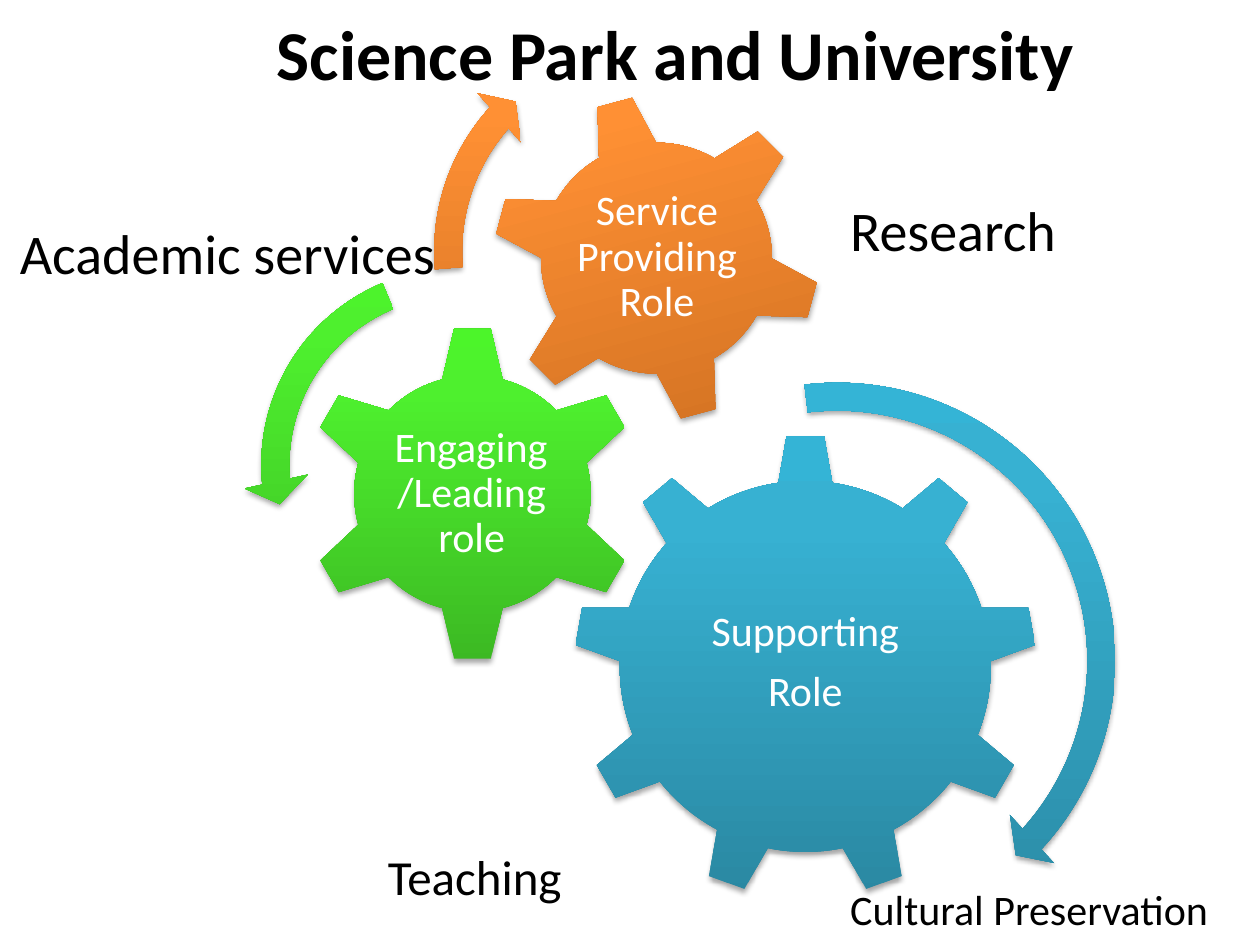
import dataclasses

import lxml.etree
import pptx
import pptx.dml.color
import pptx.enum.shapes
import pptx.enum.text
import pptx.oxml.ns
import pptx.util

Cm = pptx.util.Cm
Pt = pptx.util.Pt
SHAPE = pptx.enum.shapes.MSO_SHAPE
qn = pptx.oxml.ns.qn


@dataclasses.dataclass(frozen=True)
class Theme:
    font: str = "Calibri"
    text: str = "000000"
    gear_text: str = "FFFFFF"
    shadow: str = "000000"
    # Gradients run from the bottom up
    stops: tuple = (0, 80, 100)
    blue: tuple = ("2A88A2", "37B1D2", "34B4D6")
    green: tuple = ("3CB923", "4EF02E", "4CF52A")
    orange: tuple = ("CC6E20", "FF9034", "FF9136")
    title_size: int = 40
    large: int = 32
    medium: int = 28
    small: int = 24


def write_text(tf, text, *, font, size, color, bold=False, align=None,
               line_spacing=None, space_after=None):
    """Fill a text frame, one paragraph per line of text."""
    for i, line in enumerate(text.split("\n")):
        p = tf.paragraphs[0] if i == 0 else tf.add_paragraph()
        p.alignment = align
        p.line_spacing = line_spacing
        p.space_after = space_after
        r = p.add_run()
        r.text = line
        r.font.name = font
        r.font.size = Pt(size)
        r.font.bold = bold
        r.font.color.rgb = pptx.dml.color.RGBColor.from_string(color)


def add_color(parent, color):
    return lxml.etree.SubElement(parent, qn("a:srgbClr"), val=color)


class SlideBuilder:
    def __init__(self, slide, theme):
        self.slide = slide
        self.theme = theme

    def solid(self, kind, left, top, size, colors, rotation=0, adjust=()):
        """Add a square preset shape with gradient fill and soft shadow."""
        s = self.slide.shapes.add_shape(kind, Cm(left), Cm(top), Cm(size), Cm(size))
        s.rotation = rotation
        for i, value in enumerate(adjust):
            s.adjustments[i] = value
        s.line.fill.background()

        s.fill.gradient()
        s.fill.gradient_angle = 90
        stops = s.fill._fill._gradFill.find(qn("a:gsLst"))
        for gs in list(stops):
            stops.remove(gs)
        for position, color in zip(self.theme.stops, colors):
            gs = lxml.etree.SubElement(stops, qn("a:gs"), pos=str(position * 1000))
            add_color(gs, color)

        s.shadow.inherit = False
        effects = s._element.spPr.find(qn("a:effectLst"))
        shadow = lxml.etree.SubElement(
            effects, qn("a:outerShdw"), blurRad=str(Pt(3.1)), dist=str(Pt(1.8)),
            dir="5400000", rotWithShape="0")
        lxml.etree.SubElement(add_color(shadow, self.theme.shadow),
                              qn("a:alpha"), val="35000")

    def gear_text(self, text, left, top, width, height):
        s = self.slide.shapes.add_textbox(Cm(left), Cm(top), Cm(width), Cm(height))
        tf = s.text_frame
        tf.word_wrap = True
        tf.vertical_anchor = pptx.enum.text.MSO_ANCHOR.MIDDLE
        tf.margin_left = tf.margin_right = tf.margin_top = tf.margin_bottom = Cm(0.08)
        size = self.theme.small
        write_text(tf, text, font=self.theme.font, size=size,
                   color=self.theme.gear_text,
                   align=pptx.enum.text.PP_ALIGN.CENTER,
                   line_spacing=0.9, space_after=Pt(0.35 * size))

    def label(self, text, left, top, width, height, size, bold=False):
        s = self.slide.shapes.add_textbox(Cm(left), Cm(top), Cm(width), Cm(height))
        tf = s.text_frame
        tf.word_wrap = False
        tf.auto_size = pptx.enum.text.MSO_AUTO_SIZE.SHAPE_TO_FIT_TEXT
        write_text(tf, text, font=self.theme.font, size=size,
                   color=self.theme.text, bold=bold)


def main():
    prs = pptx.Presentation()
    prs.slide_width, prs.slide_height = Cm(25.4), Cm(19.05)
    theme = Theme()
    b = SlideBuilder(prs.slides.add_slide(prs.slide_layouts[6]), theme)

    # Gears with their roles
    b.solid(SHAPE.GEAR_9, 11.56, 8.76, 9.35, theme.blue)
    b.gear_text("Supporting\nRole", 13.44, 10.97, 5.59, 4.8)
    b.solid(SHAPE.GEAR_6, 6.12, 6.55, 6.81, theme.green)
    b.gear_text("Engaging/Leading role", 7.82, 8.28, 3.38, 3.35)
    b.solid(SHAPE.GEAR_6, 9.91, 1.88, 6.65, theme.orange, rotation=345)
    b.gear_text("Service Providing Role", 11.38, 3.33, 3.73, 3.73)

    # Arrows showing the turning direction
    b.solid(SHAPE.CIRCULAR_ARROW, 10.9, 7.34, 11.96, theme.blue,
            adjust=(0.047, 2.99, 25.49, 157.93, 0.055))
    b.solid(SHAPE.LEFT_CIRCULAR_ARROW, 4.9, 5.03, 8.69, theme.green,
            adjust=(0.065, 4.3, 104.89, 148.38, 0.075))
    b.solid(SHAPE.CIRCULAR_ARROW, 8.38, 0.38, 9.37, theme.orange,
            adjust=(0.06, 3.94, 133.14, 105.08, 0.07))

    # Title and surrounding labels
    b.label("Science Park and University", 5.33, 0.08, 16.76, 1.96,
            theme.title_size, bold=True)
    b.label("Teaching", 7.57, 16.94, 4.27, 1.45, theme.medium)
    b.label("Research", 16.89, 3.81, 4.7, 1.63, theme.large)
    b.label("Academic services", 0.15, 4.29, 8.97, 1.63, theme.large)
    b.label("Cultural Preservation", 16.89, 17.68, 7.8, 1.27, theme.small)

    prs.save("out.pptx")


if __name__ == "__main__":
    main()
